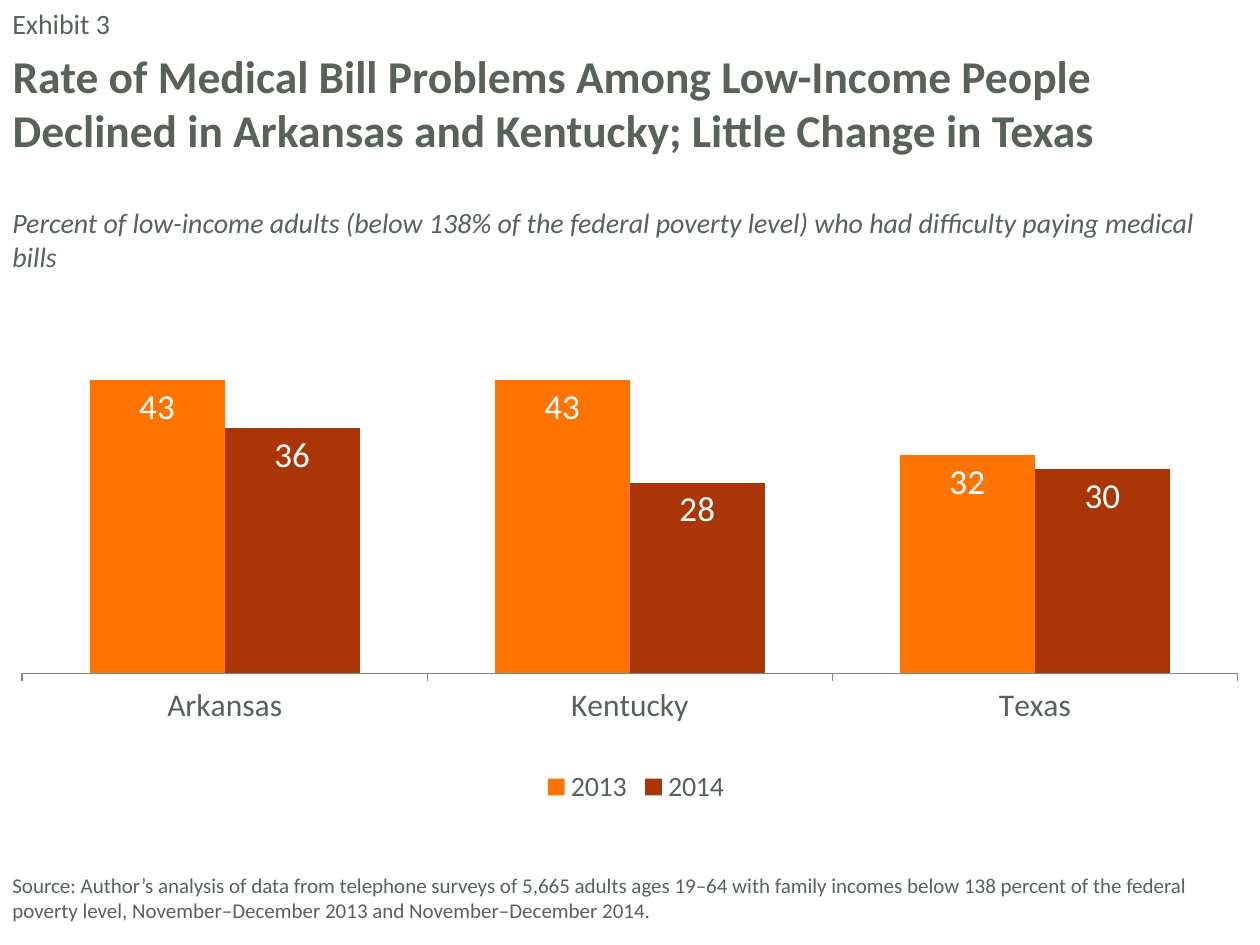
from lxml import etree
from pptx import Presentation
from pptx import util as u
from pptx.chart.data import CategoryChartData
from pptx.dml.color import RGBColor
from pptx.enum import chart as ch, text as tx
from pptx.oxml import ns

GREEN = RGBColor(0x57, 0x62, 0x58)
ORANGE = RGBColor(0xFF, 0x73, 0x00)
RUST = RGBColor(0xAA, 0x36, 0x07)
WHITE = RGBColor(0xFF, 0xFF, 0xFF)
GREY = RGBColor(0x86, 0x86, 0x86)
FACE = "Calibri"
WIDE, HIGH = u.Inches(10), u.Inches(7.5)

STATES = ["Arkansas", "Kentucky", "Texas"]
YEARS = [
    ("2013", [43, 43, 32], ORANGE, "0"),
    ("2014", [36, 28, 30], RUST, r"#,##0;\(#,##0\)"),
]


def area(left, top, width, height):
    return [int(WIDE * left), int(HIGH * top), int(WIDE * width), int(HIGH * height)]


def style(font, size, color=GREEN, bold=False, italic=False):
    font.name, font.size = FACE, u.Pt(size)
    font.bold, font.italic = bold, italic
    font.color.rgb = color


def write(shape, words, anchor=tx.MSO_ANCHOR.TOP, **form):
    frame = shape.text_frame
    frame.word_wrap = True
    frame.auto_size = tx.MSO_AUTO_SIZE.NONE
    frame.vertical_anchor = anchor
    frame.text = words
    para = frame.paragraphs[0]
    para.alignment = tx.PP_ALIGN.LEFT
    style(para.runs[0].font, **form)


def head(slide, box):
    title = slide.shapes.title
    title.left, title.top, title.width, title.height = box
    write(title, "Rate of Medical Bill Problems Among Low-Income People "
          "Declined in Arkansas and Kentucky; Little Change in Texas",
          size=26, bold=True)


def note(slide, box, words, **form):
    write(slide.shapes.add_textbox(*box), words, **form)


def place(chart, left, top, width, height):
    plot = chart.element.find(".//" + ns.qn("c:plotArea"))
    for old in plot.findall(ns.qn("c:layout")):
        plot.remove(old)
    layout = etree.Element(ns.qn("c:layout"))
    manual = etree.SubElement(layout, ns.qn("c:manualLayout"))
    parts = [("layoutTarget", "inner"), ("xMode", "edge"), ("yMode", "edge"),
             ("x", left), ("y", top), ("w", width), ("h", height)]
    for tag, val in parts:
        etree.SubElement(manual, ns.qn("c:" + tag)).set("val", str(val))
    plot.insert(0, layout)


def bars(slide, box):
    data = CategoryChartData()
    data.categories = STATES
    for name, vals, _, form in YEARS:
        data.add_series(name, vals, number_format=form)
    chart = slide.shapes.add_chart(
        ch.XL_CHART_TYPE.COLUMN_CLUSTERED, *box, data).chart
    chart.has_title = False
    style(chart.font, 16)
    place(chart, 0, 0, 0.99, 0.75)

    scale = chart.value_axis
    scale.minimum_scale, scale.maximum_scale = 0, 60
    scale.major_unit = 10
    scale.has_major_gridlines = False
    scale.visible = False

    base = chart.category_axis
    base.major_tick_mark = ch.XL_TICK_MARK.OUTSIDE
    base.format.line.color.rgb = GREY
    style(base.tick_labels.font, 18)

    chart.has_legend = True
    chart.legend.position = ch.XL_LEGEND_POSITION.BOTTOM
    chart.legend.include_in_layout = True
    style(chart.legend.font, 16)

    plot = chart.plots[0]
    plot.gap_width, plot.overlap = 100, 0
    plot.vary_by_categories = False
    for series, (_, _, color, form) in zip(plot.series, YEARS):
        series.format.fill.solid()
        series.format.fill.fore_color.rgb = color
        labels = series.data_labels
        labels.show_value = True
        labels.position = ch.XL_LABEL_POSITION.INSIDE_END
        labels.number_format = form
        labels.number_format_is_linked = False
        style(labels.font, 20, WHITE)


def main():
    deck = Presentation()
    deck.slide_width, deck.slide_height = WIDE, HIGH
    slide = deck.slides.add_slide(deck.slide_layouts[5])
    head(slide, area(0, 0.044, 1, 0.131))
    note(slide, area(0, 0, 1, 0.044), "Exhibit 3", size=16)
    note(slide, area(0, 0.893, 0.983, 0.09),
         "Source: Author’s analysis of data from telephone surveys of 5,665 "
         "adults ages 19–64 with family incomes below 138 percent of the federal "
         "poverty level, November–December 2013 and November–December 2014.",
         size=12, anchor=tx.MSO_ANCHOR.BOTTOM)
    bars(slide, area(0.017, 0.28, 0.975, 0.577))
    note(slide, area(0, 0.211, 0.992, 0.049),
         "Percent of low-income adults (below 138% of the federal poverty level) "
         "who had difficulty paying medical bills", size=16, italic=True)
    deck.save("out.pptx")


if __name__ == "__main__":
    main()
